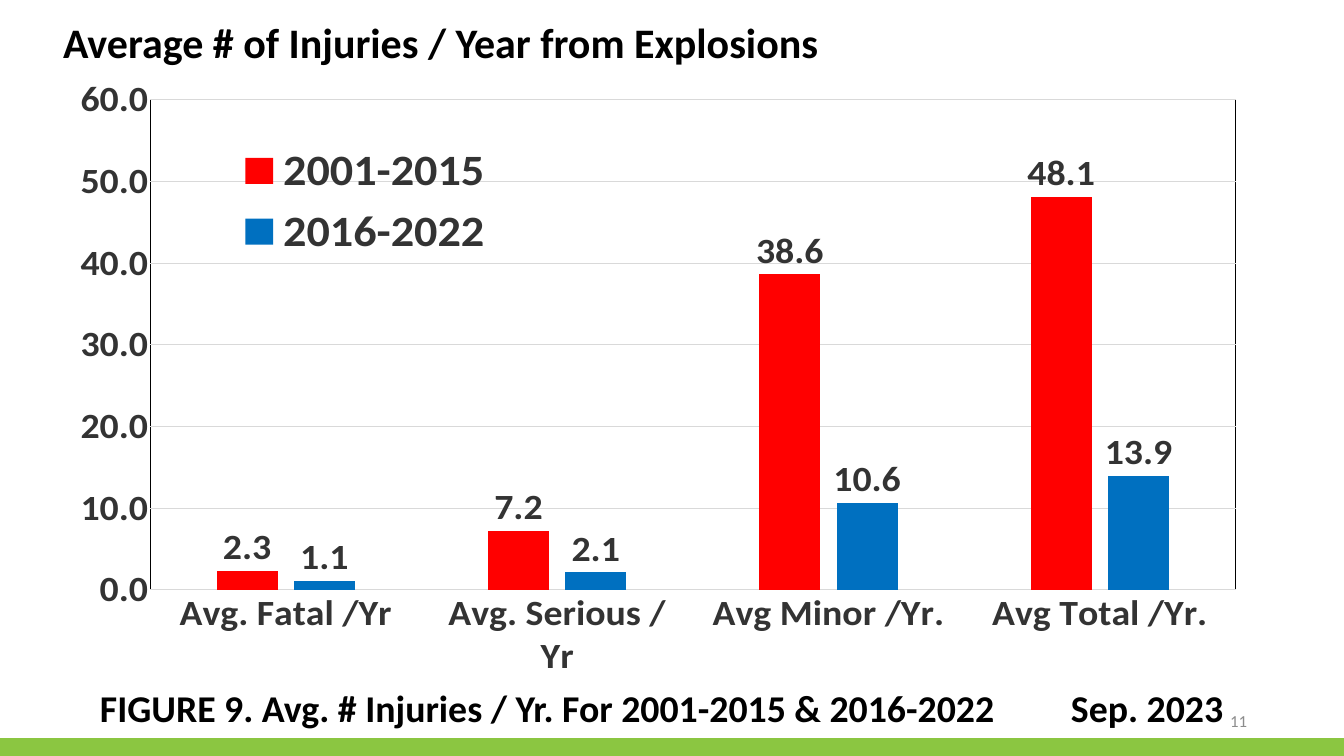
from lxml import etree
from pptx import Presentation
from pptx import util as u
from pptx.chart.data import CategoryChartData
from pptx.dml.color import RGBColor
from pptx.enum import chart as charts, shapes, text
from pptx.oxml import parse_xml
from pptx.oxml.ns import nsdecls, qn

PX_PER_INCH = 50.4
BLACK = RGBColor(0x00, 0x00, 0x00)
WHITE = RGBColor(0xFF, 0xFF, 0xFF)
GREEN = RGBColor(0x8B, 0xC6, 0x41)
GRAY = RGBColor(0x8C, 0x8C, 0x8C)
DARK = RGBColor(0x33, 0x33, 0x33)
GRID = RGBColor(0xD9, 0xD9, 0xD9)
RED = RGBColor(0xFF, 0x00, 0x00)
BLUE = RGBColor(0x00, 0x70, 0xC0)


def box(*lengths):
    return [u.Inches(length / PX_PER_INCH) for length in lengths]


def style(font, size, color, bold=True):
    font.name = "Calibri"
    font.size = u.Pt(size)
    font.bold = bold
    font.color.rgb = color


presentation = Presentation()
presentation.slide_width, presentation.slide_height = box(1344, 756)
slide = presentation.slides.add_slide(presentation.slide_layouts[5])

# Green footer band
band = slide.shapes.add_shape(shapes.MSO_SHAPE.RECTANGLE, *box(0, 738, 1344, 18))
band.shadow.inherit = False
band.fill.solid()
band.fill.fore_color.rgb = GREEN
band.line.fill.background()

# Title
title = slide.shapes.title
title.left, title.top, title.width, title.height = box(58, 20, 947, 70)
title.text_frame.text = "Average # of Injuries / Year from Explosions"

# Chart data
data = CategoryChartData(number_format="0.0")
data.categories = ["Avg. Fatal /Yr", "Avg. Serious / Yr", "Avg Minor /Yr.", "Avg Total /Yr."]
data.add_series("2001-2015", [2.3, 7.2, 38.6, 48.1])
data.add_series("2016-2022", [1.1, 2.1, 10.6, 13.9])
chart = slide.shapes.add_chart(
    charts.XL_CHART_TYPE.COLUMN_CLUSTERED, *box(58, 78, 1228, 600), data).chart
chart.has_title = False
style(chart.font, 10, BLACK, bold=False)

# Columns and their labels
plot = chart.plots[0]
plot.gap_width = 219
plot.overlap = -27
plot.vary_by_categories = False
for series, color in zip(plot.series, (RED, BLUE)):
    series.format.fill.solid()
    series.format.fill.fore_color.rgb = color
    labels = series.data_labels
    labels.show_value = True
    labels.position = charts.XL_LABEL_POSITION.OUTSIDE_END
    labels.number_format = "0.0"
    labels.number_format_is_linked = False
    style(labels.font, 54, DARK)

# Axes
for axis in (chart.category_axis, chart.value_axis):
    axis.major_tick_mark = axis.minor_tick_mark = charts.XL_TICK_MARK.NONE
    style(axis.tick_labels.font, 54, DARK)
category_line = chart.category_axis.format.line
value_axis = chart.value_axis
value_axis.minimum_scale = 0
value_axis.maximum_scale = 60
value_axis.major_unit = 10
value_axis.tick_labels.number_format = "0.0"
value_axis.tick_labels.number_format_is_linked = False
value_axis.format.line.fill.background()
value_axis.has_major_gridlines = True
for line in (category_line, value_axis.major_gridlines.format.line):
    line.color.rgb = GRID
    line.width = u.Pt(0.75)

# Legend
chart.has_legend = True
chart.legend.position = charts.XL_LEGEND_POSITION.BOTTOM
chart.legend.include_in_layout = False
style(chart.legend.font, 66, DARK)

# Manual places of plot and legend, as fractions of the chart
chart_space = chart.element
plot_area = chart_space.find(".//" + qn("c:plotArea"))
legend = chart_space.find(".//" + qn("c:legend"))
for parent, index, target, fractions in (
        (plot_area, 0, '<c:layoutTarget val="inner"/>', (0.075, 0.034, 0.884, 0.872)),
        (legend, 1, "", (0.14, 0.1, 0.22, 0.23))):
    for old in parent.findall(qn("c:layout")):
        parent.remove(old)
    modes = '<c:xMode val="edge"/><c:yMode val="edge"/>'
    sizes = "".join(f'<c:{key} val="{value}"/>' for key, value in zip("xywh", fractions))
    parent.insert(index, parse_xml(
        f'<c:layout {nsdecls("c")}><c:manualLayout>{target}{modes}{sizes}'
        "</c:manualLayout></c:layout>"))

# Plot frame and white chart background
FORMAT = ("<c:spPr " + nsdecls("c", "a") + ">{fill}<a:ln{width}>{line}</a:ln></c:spPr>")
SOLID = '<a:solidFill><a:srgbClr val="{}"/></a:solidFill>'
plot_area.append(parse_xml(FORMAT.format(
    fill="<a:noFill/>", width=' w="9525"', line=SOLID.format(BLACK))))
chart_space.find(qn("c:chart")).addnext(parse_xml(FORMAT.format(
    fill=SOLID.format(WHITE), width="", line="<a:noFill/>")))

# Caption, with the date at a tab stop
caption = slide.shapes.add_textbox(*box(95, 687, 1239, 106))
caption.text_frame.text = "FIGURE 9. Avg. # Injuries / Yr. For 2001-2015 & 2016-2022\tSep. 2023"
properties = caption.text_frame.paragraphs[0]._p.get_or_add_pPr()
tabs = etree.SubElement(properties, qn("a:tabLst"))
etree.SubElement(tabs, qn("a:tab"), pos=str(box(971)[0]), algn="l")

# Slide number
number = slide.shapes.add_textbox(*box(950, 701, 302, 40))
number.text_frame.text = "11"

# Text formats
TOP, MIDDLE = text.MSO_ANCHOR.TOP, text.MSO_ANCHOR.MIDDLE
LEFT, RIGHT = text.PP_ALIGN.LEFT, text.PP_ALIGN.RIGHT
for shape, size, color, bold, anchor, alignment, spacing in (
        (title, 60, BLACK, True, TOP, LEFT, 0.9),
        (caption, 54, BLACK, True, TOP, LEFT, 0.9),
        (number, 24, GRAY, False, MIDDLE, RIGHT, 1.0)):
    frame = shape.text_frame
    frame.word_wrap = True
    frame.auto_size = text.MSO_AUTO_SIZE.NONE
    frame.vertical_anchor = anchor
    paragraph = frame.paragraphs[0]
    paragraph.alignment = alignment
    paragraph.line_spacing = spacing
    for run in paragraph.runs:
        style(run.font, size, color, bold)

presentation.save("out.pptx")
